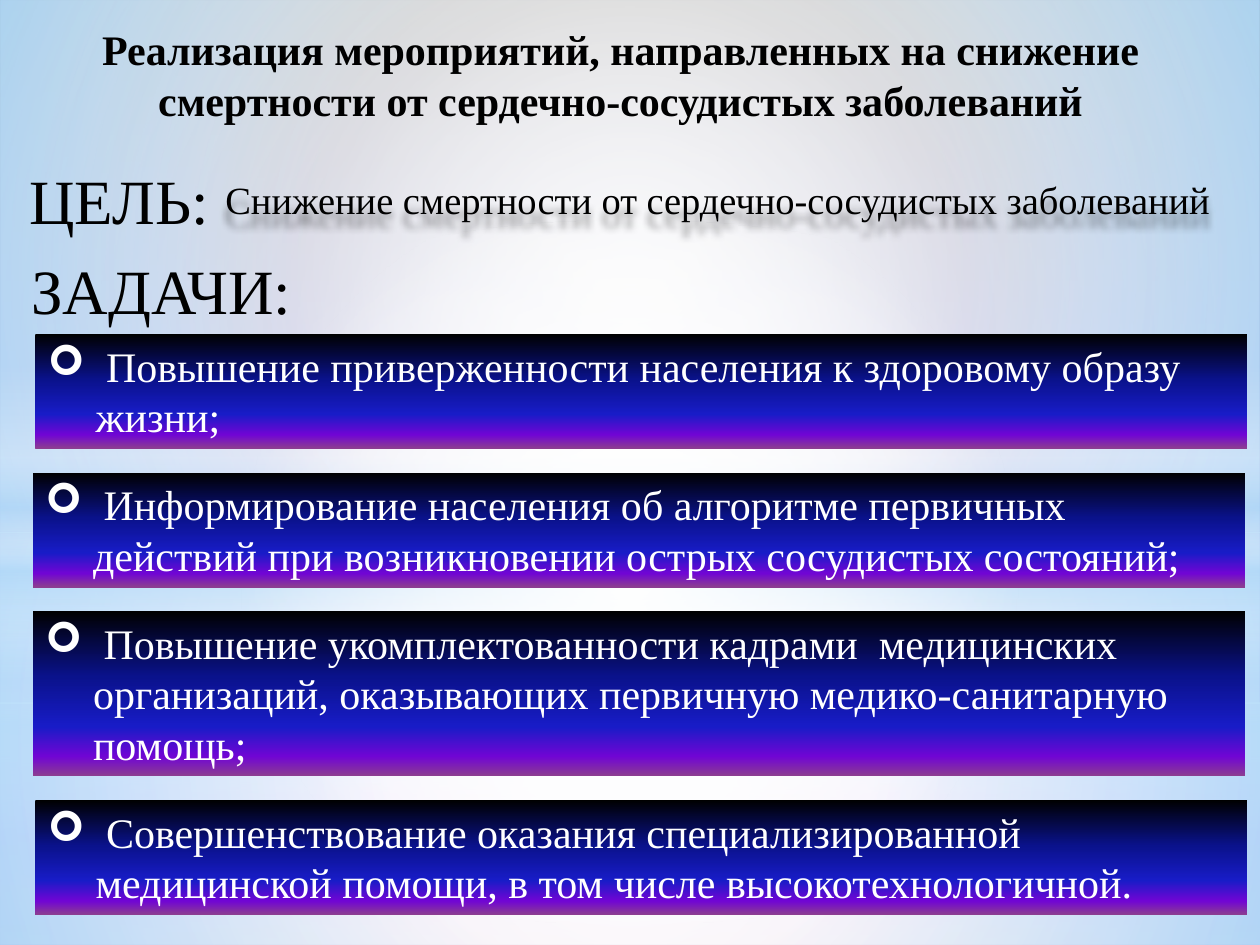
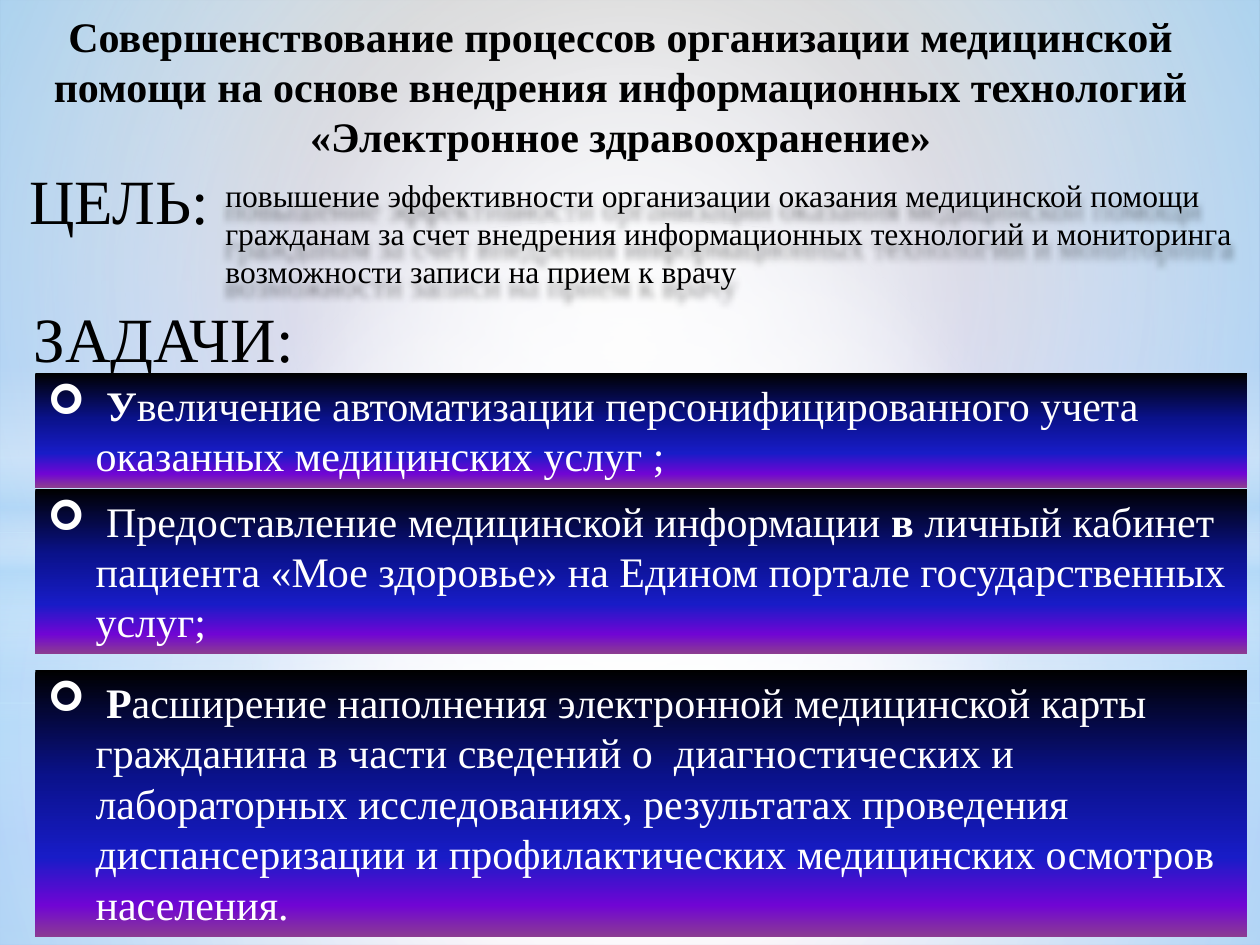
"""Build two slides on health care goals and tasks."""
from lxml import etree
from pptx import Presentation
from pptx.dml.color import RGBColor
from pptx.enum.shapes import MSO_SHAPE as SHAPE
from pptx.enum.text import MSO_ANCHOR as ANCHOR, MSO_AUTO_SIZE as AUTO, PP_ALIGN as ALIGN
from pptx.oxml.ns import qn
from pptx.util import Inches, Pt

FONT = "Times New Roman"
BLACK = RGBColor(0x00, 0x00, 0x00)
WHITE = RGBColor(0xFF, 0xFF, 0xFF)
SKY = RGBColor(0xB4, 0xDC, 0xFA)
NAVY = RGBColor(0x0A, 0x12, 0x8C)
BLUE = RGBColor(0x18, 0x1C, 0xC7)
VIOLET = RGBColor(0x70, 0x05, 0xD4)
PLUM = RGBColor(0x8C, 0x3D, 0x91)

NIGHT = [(0, BLACK, 100), (40, NAVY, 100), (70, BLUE, 100), (88, VIOLET, 100), (100, PLUM, 100)]
LOWER = [(0, WHITE, 91), (37, WHITE, 76), (100, SKY, 79)]
UPPER = [(0, WHITE, 89), (48, WHITE, 62), (100, SKY, 79)]
STREAK = [(0, WHITE, 0), (29, WHITE, 30), (45, SKY, 40), (55, WHITE, 26), (65, SKY, 60),
          (100, WHITE, 0)]

TASK_LEFT, TASK_WIDTH = 0.28, 9.62

HEART_TASKS = [
    (0.28, 2.65, 0.91, [" ", "Повышение приверженности населения к здоровому образу жизни;"]),
    (0.26, 3.75, 0.91, [" ", "Информирование населения об алгоритме первичных действий при "
                        "возникновении острых сосудистых состояний;"]),
    (0.26, 4.85, 1.31, [" ", "Повышение укомплектованности кадрами  медицинских организаций, "
                        "оказывающих первичную медико-санитарную помощь;"]),
    (0.28, 6.35, 0.91, [" ", "Совершенствование оказания специализированной медицинской помощи, "
                        "в том числе высокотехнологичной."]),
]
DIGITAL_TASKS = [
    (0.28, 2.96, 0.91, [" У", "величение автоматизации персонифицированного учета оказанных "
                        "медицинских услуг ;"]),
    (0.28, 3.88, 1.31, [" ", "Предоставление медицинской информации ", "в ",
                        "личный кабинет пациента «Мое здоровье» на Едином портале "
                        "государственных услуг;"]),
    (0.28, 5.32, 2.12, [" Р", "асширение наполнения электронной медицинской карты гражданина "
                        "в части сведений о  диагностических и лабораторных исследованиях, "
                        "результатах проведения диспансеризации и профилактических "
                        "медицинских осмотров населения."]),
]


def add_node(parent, tag, **attrs):
    """Append an XML child with the given attributes."""
    return etree.SubElement(parent, qn(tag), {k: str(v) for k, v in attrs.items()})


def add_color(parent, color, alpha):
    """Append a colour with its opacity in percent."""
    node = add_node(parent, "a:srgbClr", val=color)
    if alpha < 100:
        add_node(node, "a:alpha", val=alpha * 1000)


def paint(fill, owner, stops, radial=False):
    """Fill with a vertical or a radial gradient."""
    fill.gradient()
    grad = owner.element.xpath(".//a:gradFill")[0]
    for child in list(grad):
        grad.remove(child)
    stop_list = add_node(grad, "a:gsLst")
    for pos, color, alpha in stops:
        add_color(add_node(stop_list, "a:gs", pos=pos * 1000), color, alpha)
    if radial:
        centre = add_node(grad, "a:path", path="circle")
        add_node(centre, "a:fillToRect", l=50000, t=50000, r=50000, b=50000)
    else:
        add_node(grad, "a:lin", ang=5400000, scaled=0)


def add_block(s, kind, left, top, width, height, stops, radial=False):
    """Add a borderless shape with a gradient."""
    sp = s.shapes.add_shape(kind, Inches(left), Inches(top), Inches(width), Inches(height))
    sp.shadow.inherit = False
    sp.line.fill.background()
    paint(sp.fill, sp, stops, radial)
    return sp


def add_backdrop(s):
    """Build the glow and bands and put them on the slide's layout."""
    layout = s.slide_layout
    paint(layout.background.fill, layout, NIGHT)
    bands = []
    for split, streak_top, glow_end in [(5.58, 4.12, 56), (4.23, 2.9, 54)]:
        glow = [(0, WHITE, 100), (glow_end, WHITE, 0)]
        bands += [
            add_block(s, SHAPE.RECTANGLE, 0, split, 10, 7.5 - split, LOWER, True),
            add_block(s, SHAPE.RECTANGLE, 0, 0, 10, split, UPPER, True),
            add_block(s, SHAPE.RECTANGLE, 0, streak_top, 10, 2.5, STREAK),
            add_block(s, SHAPE.OVAL, 0, 1.75, 10, 5.58, glow, True),
        ]
    title, *footers = list(layout.placeholders)
    for footer in footers:
        footer.element.getparent().remove(footer.element)
    for band in bands:
        title.element.addprevious(band.element)


def style_run(r, size, color, bold=False):
    """Set the font of a run."""
    r.font.name = FONT
    r.font.size = Pt(size)
    r.font.bold = bold
    r.font.color.rgb = color


def set_frame(tf):
    """Wrap text from the top of its frame."""
    tf.word_wrap = True
    tf.auto_size = AUTO.SHAPE_TO_FIT_TEXT
    tf.vertical_anchor = ANCHOR.TOP


def write(sp, text, size, align=ALIGN.LEFT, bold=False):
    """Write one black paragraph."""
    tf = sp.text_frame
    tf.text = text
    set_frame(tf)
    p = tf.paragraphs[0]
    p.alignment = align
    style_run(p.runs[0], size, BLACK, bold)


def add_title(s, text, top, height):
    """Place and fill the title."""
    sp = s.shapes.title
    sp.left, sp.top, sp.width, sp.height = (Inches(v) for v in (0.28, top, 9.29, height))
    write(sp, text, 24, ALIGN.CENTER, True)


def add_text(s, text, left, top, width, height, size, align=ALIGN.LEFT):
    """Add a text box."""
    sp = s.shapes.add_textbox(Inches(left), Inches(top), Inches(width), Inches(height))
    write(sp, text, size, align)
    return sp


def add_goal(s, text, height, size):
    """Add the goal label and its softly shadowed text."""
    sp = add_text(s, text, 1.69, 1.35, 8.31, height, size)
    sp.shadow.inherit = False
    effects = sp.element.spPr.find(qn("a:effectLst"))
    shadow = add_node(effects, "a:outerShdw", blurRad=50800, dist=88900, dir=5400000,
                      algn="t", rotWithShape=0)
    add_color(shadow, BLACK, 40)
    add_text(s, "ЦЕЛЬ:", 0.12, 1.23, 1.65, 0.71, 36, ALIGN.CENTER)


def add_task(s, left, top, height, parts):
    """Add a bulleted task bar whose text parts alternate bold and regular."""
    sp = add_block(s, SHAPE.RECTANGLE, left, top, TASK_WIDTH, height, NIGHT)
    set_frame(sp.text_frame)
    p = sp.text_frame.paragraphs[0]
    p.alignment = ALIGN.LEFT
    for i, part in enumerate(parts):
        r = p.add_run()
        r.text = part
        style_run(r, 24, WHITE, i % 2 == 0)
    props = p.runs[0].font and p.alignment is not None and sp.element.xpath(".//a:pPr")[0]
    props.set("marL", str(Inches(0.38)))
    props.set("indent", str(-Inches(0.38)))
    add_node(props, "a:buFont", typeface="Wingdings")
    add_node(props, "a:buChar", char="➢")


def add_tasks(s, left, top, tasks):
    """Add the tasks label and all task bars."""
    add_text(s, "ЗАДАЧИ:", left, top, 2.52, 0.71, 36)
    for task in tasks:
        add_task(s, *task)


def main():
    """Build and save the presentation."""
    prs = Presentation()
    prs.slide_width, prs.slide_height = Inches(10), Inches(7.5)
    layout = prs.slide_layouts[5]

    s = prs.slides.add_slide(layout)
    add_backdrop(s)
    add_title(s, "Реализация мероприятий, направленных на снижение смертности "
              "от сердечно-сосудистых заболеваний", 0.14, 0.91)
    add_goal(s, "Снижение смертности от сердечно-сосудистых заболеваний", 0.47, 22)
    add_tasks(s, 0.15, 1.95, HEART_TASKS)

    s = prs.slides.add_slide(layout)
    add_title(s, "Совершенствование процессов организации медицинской помощи на основе "
              "внедрения информационных технологий «Электронное здравоохранение»", 0.03, 1.31)
    add_goal(s, "повышение эффективности организации оказания медицинской помощи гражданам "
             "за счет внедрения информационных технологий и мониторинга возможности записи "
             "на прием к врачу", 1.01, 18)
    add_tasks(s, 0.17, 2.33, DIGITAL_TASKS)

    prs.save("out.pptx")


if __name__ == "__main__":
    main()
